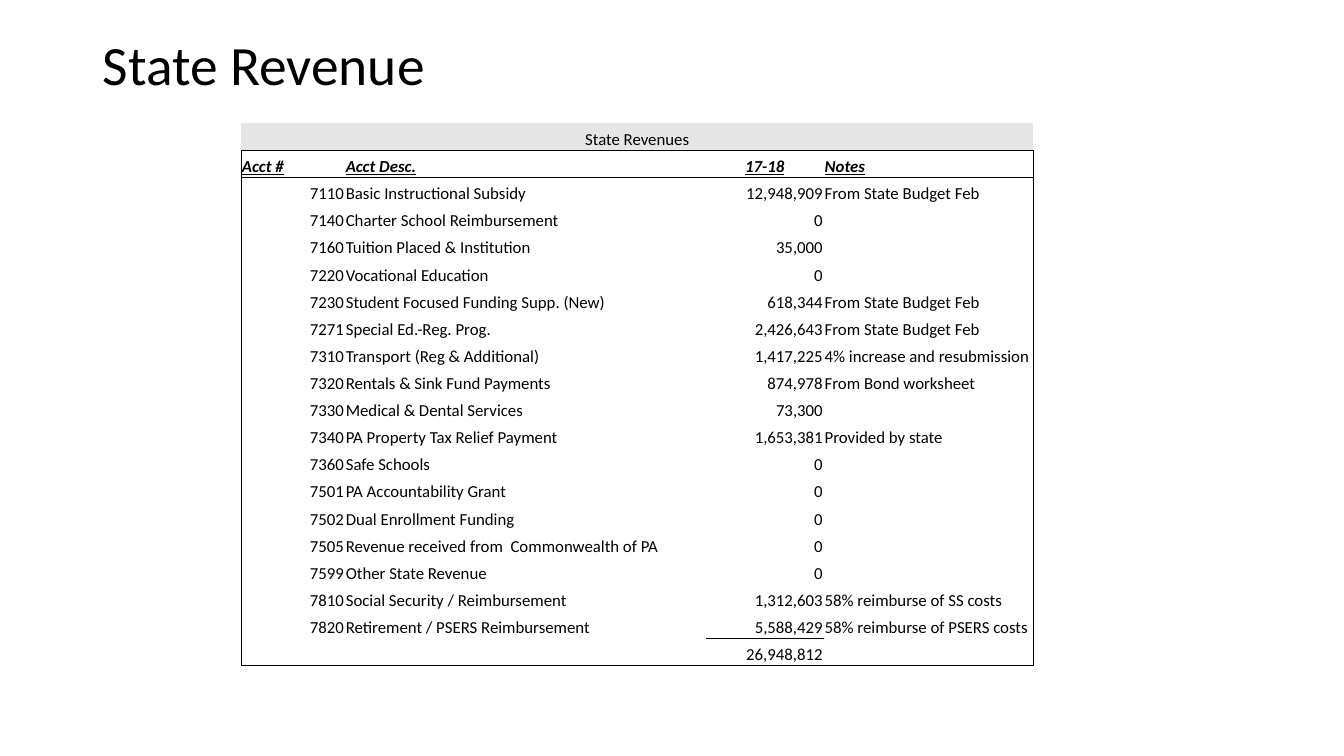
from lxml.etree import SubElement
from pptx import Presentation
from pptx.dml.color import RGBColor
from pptx.enum.text import MSO_ANCHOR as Anchor, MSO_AUTO_SIZE as AutoSize, PP_ALIGN as Align
from pptx.oxml.ns import qn
from pptx.util import Inches, Pt

BLACK, GREY, FONT = "000000", "E7E6E6", "Calibri"
NO_GRID_STYLE = "{2D5ABB26-0587-4C30-8999-92F81FD0307C}"
TITLE_BOX = (0.92, 0.4, 11.5, 0.53)
TABLE_BOX = (2.39, 1.22, 7.86, 5.38)
COLUMN_WIDTHS = (1.03, 3.58, 1.17, 2.08)
COLUMN_ALIGNS = (Align.RIGHT, Align.LEFT, Align.RIGHT, Align.LEFT)
HEADING_ALIGNS = (Align.LEFT, Align.LEFT, Align.CENTER, Align.LEFT)
BODY_TEXT = {"size": Pt(12), "name": FONT, "bold": False}
HEADING_TEXT = {**BODY_TEXT, "bold": True, "italic": True, "underline": True}
CELL_FORMAT = {
    "vertical_anchor": Anchor.BOTTOM,
    "margin_left": Inches(0.01),
    "margin_right": Inches(0.01),
    "margin_top": Inches(0.01),
    "margin_bottom": 0,
}
REVENUES = [
    ("State Revenues", "", "", ""),
    ("Acct #", "Acct Desc.", "17-18", "Notes"),
    ("7110", "Basic Instructional Subsidy", "12,948,909", "From State Budget Feb"),
    ("7140", "Charter School Reimbursement", "0", ""),
    ("7160", "Tuition Placed & Institution", "35,000", ""),
    ("7220", "Vocational Education", "0", ""),
    ("7230", "Student Focused Funding Supp. (New)", "618,344", "From State Budget Feb"),
    ("7271", "Special Ed.-Reg. Prog.", "2,426,643", "From State Budget Feb"),
    ("7310", "Transport (Reg & Additional)", "1,417,225", "4% increase and resubmission"),
    ("7320", "Rentals & Sink Fund Payments", "874,978", "From Bond worksheet"),
    ("7330", "Medical & Dental Services", "73,300", ""),
    ("7340", "PA Property Tax Relief Payment", "1,653,381", "Provided by state"),
    ("7360", "Safe Schools", "0", ""),
    ("7501", "PA Accountability Grant", "0", ""),
    ("7502", "Dual Enrollment Funding", "0", ""),
    ("7505", "Revenue received from  Commonwealth of PA", "0", ""),
    ("7599", "Other State Revenue", "0", ""),
    ("7810", "Social Security / Reimbursement", "1,312,603", "58% reimburse of SS costs"),
    ("7820", "Retirement / PSERS Reimbursement", "5,588,429", "58% reimburse of PSERS costs"),
    ("", "", "26,948,812", ""),
]


def color(value):
    """Turn a hex string into a colour."""
    return RGBColor.from_string(value)


def set_format(target, values):
    """Set every attribute of a format on the target."""
    for name, value in values.items():
        setattr(target, name, value)


def write(paragraph, text, align, values):
    """Write one aligned and formatted run, or size an empty paragraph."""
    paragraph.alignment = align
    if not text:
        paragraph._p.get_or_add_endParaRPr().set("sz", str(int(values["size"].pt * 100)))
        return
    run = paragraph.add_run()
    run.text = text
    set_format(run.font, values)
    run.font.color.rgb = color(BLACK)


def cell_edges(row, column):
    """List the ruled edges of a cell in schema order."""
    last_row, last_column = len(REVENUES) - 1, len(COLUMN_WIDTHS) - 1
    is_amount = column == 2
    rules = {
        "L": row > 0 and column == 0,
        "R": row > 0 and column == last_column,
        "T": row == 1 or (row == last_row and is_amount),
        "B": row in (0, last_row) or (row == last_row - 1 and is_amount),
    }
    return [edge for edge, ruled in rules.items() if ruled]


def draw_edges(cell, edges):
    """Rule the given edges of a cell with a thin black line."""
    properties = cell._tc.get_or_add_tcPr()
    for position, edge in enumerate(edges):
        line = SubElement(properties, qn(f"a:ln{edge}"), w=str(Pt(0.5)))
        fill = SubElement(line, qn("a:solidFill"))
        SubElement(fill, qn("a:srgbClr"), val=BLACK)
        properties.insert(position, line)


def place_title(slide, box, text):
    """Place the slide title in its box."""
    title = slide.shapes.title
    set_format(title, dict(zip(("left", "top", "width", "height"), map(Inches, box))))
    frame = title.text_frame
    set_format(frame, {"vertical_anchor": Anchor.MIDDLE, "word_wrap": True, "auto_size": AutoSize.NONE})
    paragraph = frame.paragraphs[0]
    paragraph.line_spacing = 0.9
    write(paragraph, text, Align.LEFT, {"size": Pt(39.6), "name": FONT})


def place_revenue_table(slide, box, rows):
    """Place the revenue table with a merged banner and an outer frame."""
    frame = slide.shapes.add_table(len(rows), len(COLUMN_WIDTHS), *map(Inches, box))
    table = frame.table
    set_format(table, {"first_row": False, "horz_banding": False})
    table._tbl.tblPr.find(qn("a:tableStyleId")).text = NO_GRID_STYLE
    for column, width in zip(table.columns, COLUMN_WIDTHS):
        column.width = Inches(width)
    for row_index, texts in enumerate(rows):
        table.rows[row_index].height = Inches(box[3] / len(rows))
        values = HEADING_TEXT if row_index == 1 else BODY_TEXT
        aligns = {0: [Align.CENTER] * 4, 1: HEADING_ALIGNS}.get(row_index, COLUMN_ALIGNS)
        for column_index, (text, align) in enumerate(zip(texts, aligns)):
            cell = table.cell(row_index, column_index)
            set_format(cell, CELL_FORMAT)
            if row_index == 0:
                cell.fill.solid()
                cell.fill.fore_color.rgb = color(GREY)
            else:
                cell.fill.background()
            write(cell.text_frame.paragraphs[0], text, align, values)
            draw_edges(cell, cell_edges(row_index, column_index))
    table.cell(0, 0).merge(table.cell(0, len(COLUMN_WIDTHS) - 1))


def main():
    """Build and save the presentation."""
    presentation = Presentation()
    set_format(presentation, {"slide_width": Inches(13.33), "slide_height": Inches(7.5)})
    slide = presentation.slides.add_slide(presentation.slide_layouts[5])
    place_title(slide, TITLE_BOX, "State Revenue")
    place_revenue_table(slide, TABLE_BOX, REVENUES)
    presentation.save("out.pptx")


if __name__ == "__main__":
    main()
